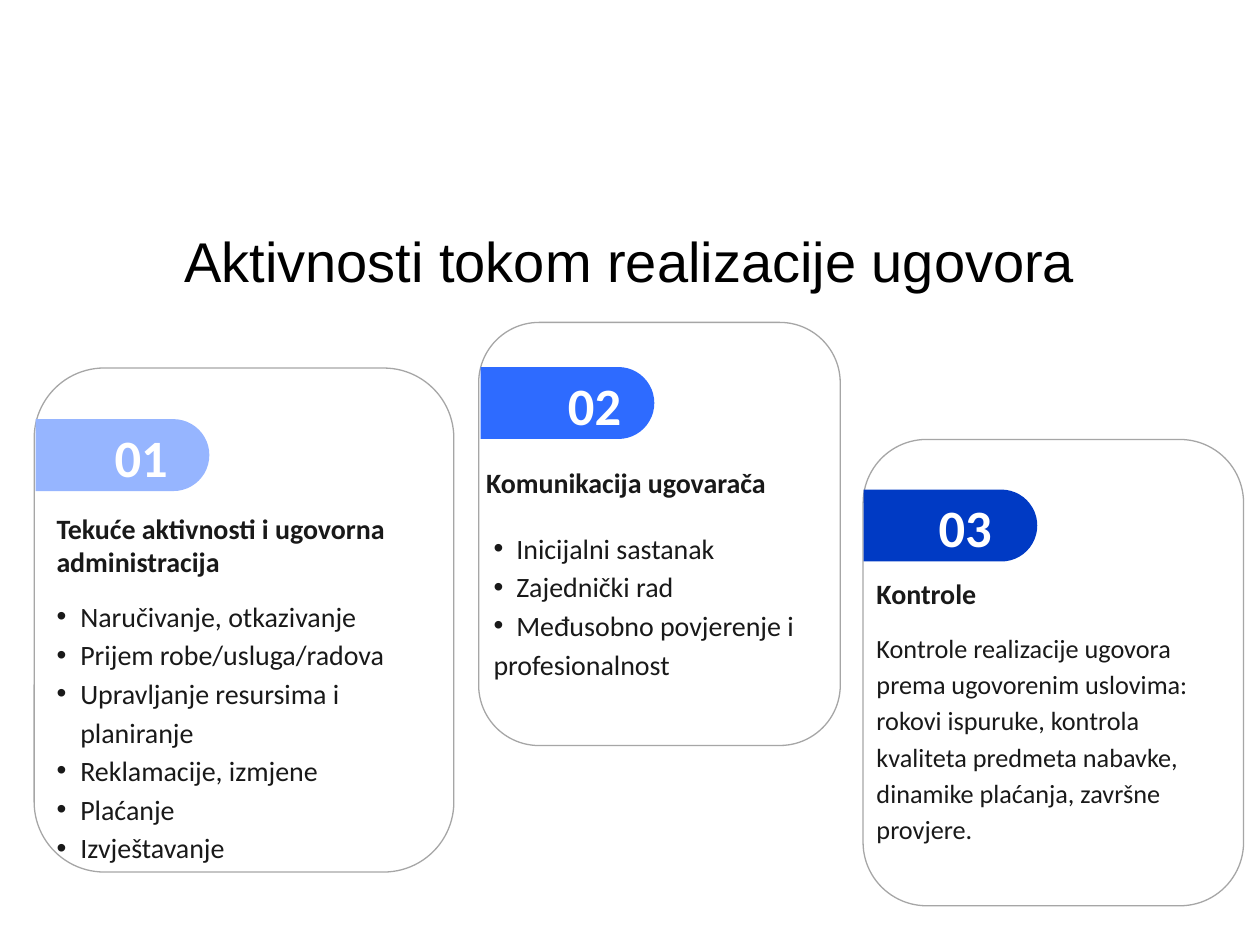
from dataclasses import dataclass
from typing import Any

from lxml.etree import SubElement
from pptx import Presentation
from pptx.dml.color import RGBColor
from pptx.enum.shapes import MSO_SHAPE as Preset
from pptx.enum.text import MSO_ANCHOR as Anchor, PP_ALIGN as Align
from pptx.oxml.ns import qn
from pptx.util import Cm, Pt


def rgb(value):
    return RGBColor.from_string(value)


def add_bullet(paragraph, color, hanging, tab):
    """Bullet with a hanging indent, or flush left with a tab after it."""
    props = paragraph._p.get_or_add_pPr()
    props.set("marL", str(Cm(hanging)))
    props.set("indent", str(-Cm(hanging)))
    bullet_color = SubElement(props, qn("a:buClr"))
    SubElement(bullet_color, qn("a:srgbClr"), val=color)
    SubElement(props, qn("a:buFont"), typeface="Arial")
    SubElement(props, qn("a:buChar"), char="•")
    if tab:
        stops = SubElement(props, qn("a:tabLst"))
        SubElement(stops, qn("a:tab"), pos=str(Cm(tab)), algn="l")


@dataclass
class Deck:
    slide: Any
    ink: str = "191919"
    outline: str = "A6A6A6"
    font: str = "Calibri"
    inset: float = 0.25

    def text(self, box, lines, size=16, color=None, font=None, bold=False,
             align=Align.LEFT, anchor=Anchor.TOP, spacing=None,
             bullets=False, hanging=0, tab=0):
        color = color or self.ink
        frame = self.slide.shapes.add_textbox(*map(Cm, box)).text_frame
        frame.word_wrap = True
        frame.vertical_anchor = anchor
        frame.margin_left = frame.margin_right = Cm(self.inset)
        frame.margin_top = frame.margin_bottom = Cm(self.inset)
        for index, line in enumerate(lines):
            paragraph = frame.add_paragraph() if index else frame.paragraphs[0]
            if bullets:
                add_bullet(paragraph, color, hanging, tab)
            paragraph.alignment = align
            paragraph.line_spacing = spacing
            run = paragraph.add_run()
            run.text = "\t" + line if tab else line
            run.font.size = Pt(size)
            run.font.name = font or self.font
            run.font.bold = bold
            run.font.color.rgb = rgb(color)

    def card(self, box):
        card = self.slide.shapes.add_shape(Preset.ROUNDED_RECTANGLE, *map(Cm, box))
        card.shadow.inherit = False
        card.adjustments[0] = 0.167
        card.fill.background()
        card.line.color.rgb = rgb(self.outline)
        card.line.width = Pt(0.75)

    def flag(self, left, top, color, length=3.5, height=1.45):
        """Coloured flag rounded on its right end; left and top are as seen."""
        shift = (length - height) / 2
        flag = self.slide.shapes.add_shape(
            Preset.ROUND_2_SAME_RECTANGLE,
            Cm(left + shift), Cm(top - shift), Cm(height), Cm(length))
        flag.rotation = 90
        flag.shadow.inherit = False
        flag.adjustments[0] = 0.5
        flag.adjustments[1] = 0
        flag.fill.solid()
        flag.fill.fore_color.rgb = rgb(color)
        flag.line.fill.background()


ACTIVITIES = [
    dict(card=(0.69, 7.42, 8.46, 10.16), flag=(0.72, 8.45, "96B5FF"),
         number_box=(2.06, 8.66, 3.76, 1.07),
         heading="Tekuće aktivnosti i ugovorna administracija",
         heading_box=(0.89, 10.06, 8.23, 1.07),
         body_box=(0.89, 11.73, 8.26, 6.1),
         body=["Naručivanje, otkazivanje", "Prijem robe/usluga/radova",
               "Upravljanje resursima i planiranje", "Reklamacije, izmjene",
               "Plaćanje", "Izvještavanje"],
         body_format=dict(bullets=True, hanging=0.48)),
    dict(card=(9.65, 6.5, 7.29, 8.53), flag=(9.69, 7.4, "2E6BFF"),
         number_box=(11.2, 7.62, 3.48, 1.07),
         heading="Komunikacija ugovarača",
         heading_box=(9.55, 9.14, 7.77, 1.07),
         body_box=(9.7, 10.36, 6.86, 4.65),
         body=["Inicijalni sastanak", "Zajednički rad",
               "Međusobno povjerenje i profesionalnost"],
         body_format=dict(bullets=True, tab=0.46)),
    dict(card=(17.4, 8.86, 7.67, 9.4), flag=(17.41, 9.87, "003AC4"),
         number_box=(18.67, 10.08, 3.61, 1.07),
         heading="Kontrole",
         heading_box=(17.42, 11.38, 6.15, 1.22),
         body_box=(17.42, 12.4, 7.65, 5.84),
         body=["Kontrole realizacije ugovora prema ugovorenim uslovima: "
               "rokovi ispuruke, kontrola kvaliteta predmeta nabavke, "
               "dinamike plaćanja, završne provjere."],
         body_format=dict(size=15)),
]


def main():
    presentation = Presentation()
    presentation.slide_width = Cm(25.4)
    presentation.slide_height = Cm(19.05)
    deck = Deck(presentation.slides.add_slide(presentation.slide_layouts[6]))

    deck.text((1.75, 4.32, 21.9, 2.01), ["Aktivnosti tokom realizacije ugovora"],
              size=32, font="Arial", color="000000", align=Align.CENTER,
              anchor=Anchor.MIDDLE, spacing=0.9)
    for number, activity in enumerate(ACTIVITIES, start=1):
        deck.card(activity["card"])
        deck.flag(*activity["flag"])
        deck.text(activity["number_box"], [f"{number:02}"], size=30,
                  color="FFFFFF", bold=True, anchor=Anchor.MIDDLE)
        deck.text(activity["heading_box"], [activity["heading"]], bold=True)
        deck.text(activity["body_box"], activity["body"], spacing=1.15,
                  **activity["body_format"])

    presentation.save("out.pptx")


if __name__ == "__main__":
    main()
